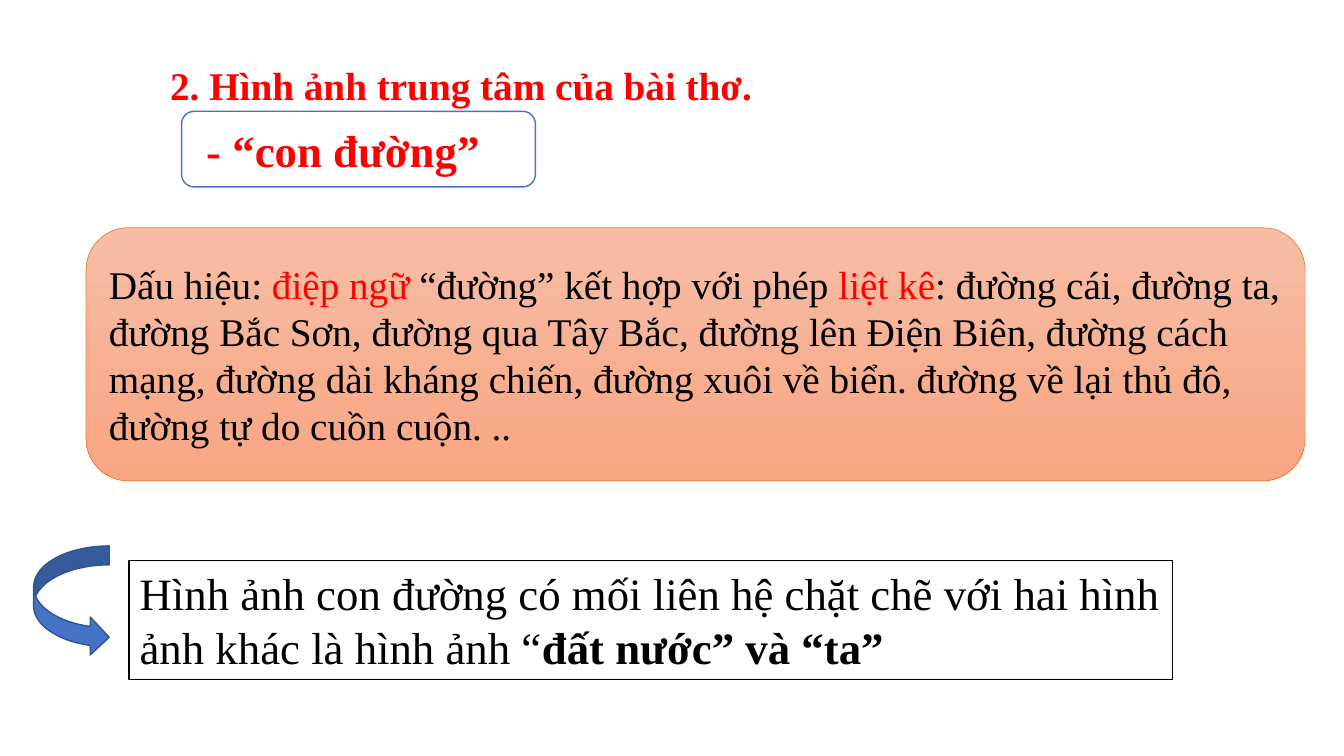
from pptx import Presentation
from pptx import util as u
from pptx.dml.color import RGBColor
from pptx.enum import shapes, text

PX = 9525  # EMU, 96 px to the inch
FONT = "Times New Roman"
RED = RGBColor(0xFF, 0x00, 0x00)
BLACK = RGBColor(0x00, 0x00, 0x00)
WHITE = RGBColor(0xFF, 0xFF, 0xFF)
BLUE = RGBColor(0x44, 0x72, 0xC4)
DARK_BLUE = RGBColor(0x32, 0x54, 0x91)
ORANGE = RGBColor(0xED, 0x7D, 0x31)
PEACH = RGBColor(0xF7, 0xBD, 0xA5)
SALMON = RGBColor(0xF8, 0xA5, 0x82)


def write(shape, *runs, size, anchor=text.MSO_ANCHOR.MIDDLE,
          align=text.PP_ALIGN.LEFT, spacing=1.0, left=10):
    """Fill the shape with one paragraph; each run is (words, colour, bold)."""
    frame = shape.text_frame
    frame.word_wrap = True
    frame.auto_size = text.MSO_AUTO_SIZE.NONE
    frame.vertical_anchor = anchor
    frame.margin_left = left * PX
    paragraph = frame.paragraphs[0]
    paragraph.alignment = align
    paragraph.line_spacing = spacing
    for words, colour, bold in runs:
        run = paragraph.add_run()
        run.text = words
        run.font.name = FONT
        run.font.size = u.Pt(size)
        run.font.bold = bold
        run.font.color.rgb = colour


def add_box(kind, left, top, width, height, fill, line, weight=1):
    shape = slide.shapes.add_shape(kind, left * PX, top * PX, width * PX, height * PX)
    shape.shadow.inherit = False
    shape.fill.solid()
    shape.fill.fore_color.rgb = fill
    shape.line.color.rgb = line
    shape.line.width = u.Pt(weight)
    return shape


presentation = Presentation()
presentation.slide_width = 1280 * PX
presentation.slide_height = 720 * PX
slide = presentation.slides.add_slide(presentation.slide_layouts[5])

title = slide.shapes.title
title.left, title.top, title.width, title.height = (n * PX for n in (104, 47, 640, 95))
write(title, ("2. Hình ảnh trung tâm của bài thơ.", RED, True), size=28,
      anchor=text.MSO_ANCHOR.TOP, align=text.PP_ALIGN.JUSTIFY, spacing=1.15, left=58)

road = add_box(shapes.MSO_SHAPE.ROUNDED_RECTANGLE, 173, 106, 337, 72, WHITE, BLUE)
write(road, ("- “con đường”", RED, True), size=32, left=20)

signs = add_box(shapes.MSO_SHAPE.ROUNDED_RECTANGLE, 82, 217, 1161, 241, PEACH, ORANGE, 0.5)
signs.fill.gradient()
signs.fill.gradient_angle = 270
for stop, colour, position in zip(signs.fill.gradient_stops, (PEACH, SALMON), (0, 1)):
    stop.color.rgb = colour
    stop.position = position
write(signs,
      ("Dấu hiệu: ", BLACK, False),
      ("điệp ngữ ", RED, False),
      ("“đường” kết hợp với phép ", BLACK, False),
      ("liệt kê", RED, False),
      (": đường cái, đường ta, đường Bắc Sơn, đường qua Tây Bắc, đường lên Điện Biên, "
       "đường cách mạng, đường dài kháng chiến, đường xuôi về biển. đường về lại thủ đô, "
       "đường tự do cuồn cuộn. ..", BLACK, False),
      size=28)

link = add_box(shapes.MSO_SHAPE.RECTANGLE, 123, 534, 994, 113, WHITE, BLACK)
write(link,
      ("Hình ảnh con đường có mối liên hệ chặt chẽ với hai hình ảnh khác là hình ảnh “",
       BLACK, False),
      ("đất nước” và “ta”", BLACK, True),
      size=32, anchor=text.MSO_ANCHOR.TOP)

add_box(shapes.MSO_SHAPE.CURVED_RIGHT_ARROW, 32, 520, 72, 105, BLUE, DARK_BLUE)

presentation.save("out.pptx")
